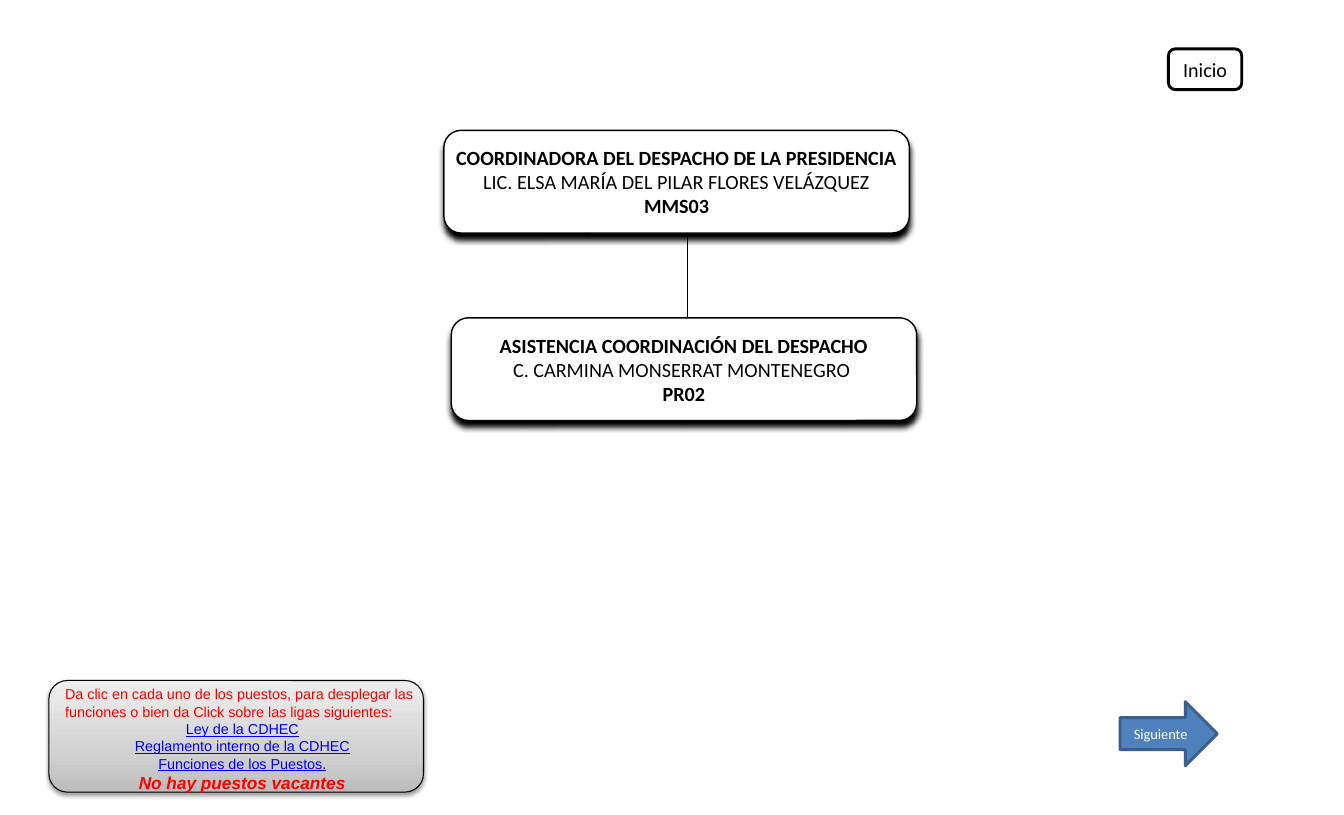
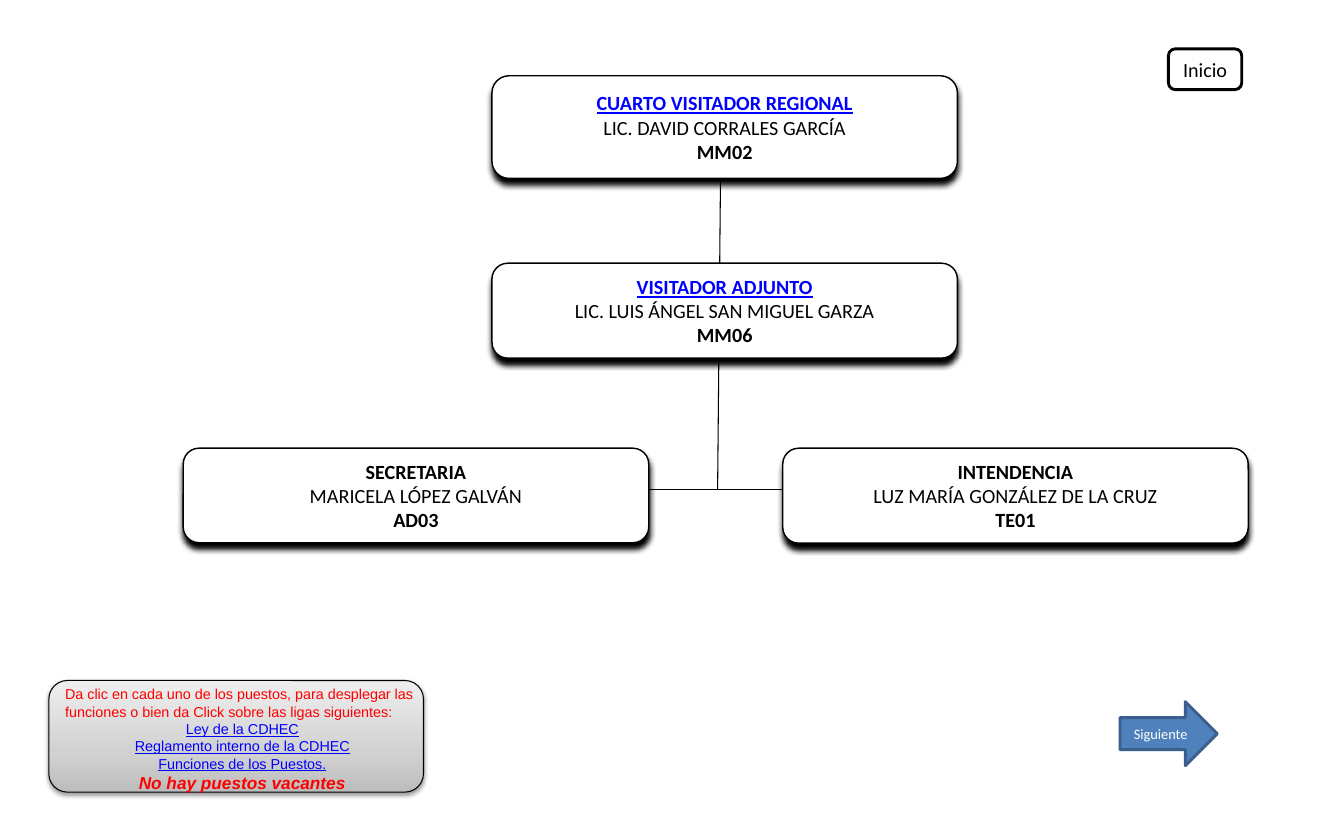
import pptx
import pptx.dml.color
import pptx.enum.shapes
import pptx.enum.text
import pptx.oxml
import pptx.oxml.ns
import pptx.util

Cm, Pt = pptx.util.Cm, pptx.util.Pt
Kind = pptx.enum.shapes.MSO_SHAPE
Align = pptx.enum.text.PP_ALIGN
Mid = pptx.enum.text.MSO_ANCHOR.MIDDLE
tint = pptx.dml.color.RGBColor.from_string
qn = pptx.oxml.ns.qn
NS = pptx.oxml.ns.nsdecls("a")

BLACK, WHITE, RED, LINK = "000000", "FFFFFF", "FF0000", "0000FF"
BLUE, NAVY = "4F81BD", "3A5F8C"
STOPS = [(0, "BDBDBD"), (35, "D1D1D1"), (100, "EEEEEE")]

BOLD = {"bold": True}
LINKED = {"underline": True}
NOTE = [
    ("Da clic en cada uno de los puestos, para desplegar las funciones "
     "o bien da Click sobre las ligas siguientes:", 10, RED, {}),
    ("Ley de la CDHEC", 10, LINK, LINKED),
    ("Reglamento interno de la CDHEC", 10, LINK, LINKED),
    ("Funciones de los Puestos.", 10, LINK, LINKED),
    ("No hay puestos vacantes", 12, RED, {"bold": True, "italic": True}),
]

# Each post: left, top, height, linked, title, holder, code
# Each link: start x, start y, end x, end y
CHARTS = [
    {"posts": [
        (10.9, 3.2, 2.52, False, "COORDINADORA DEL DESPACHO DE LA PRESIDENCIA",
         "LIC. ELSA MARÍA DEL PILAR FLORES VELÁZQUEZ", "MMS03"),
        (11.08, 7.8, 2.52, False, "ASISTENCIA COORDINACIÓN DEL DESPACHO",
         "C. CARMINA MONSERRAT MONTENEGRO ", "PR02")],
     "links": [(16.89, 5.72, 16.89, 7.8)]},
    {"posts": [
        (12.08, 1.86, 2.52, True, "CUARTO VISITADOR REGIONAL",
         "LIC. DAVID CORRALES GARCÍA", "MM02"),
        (12.08, 6.46, 2.33, True, "VISITADOR ADJUNTO",
         "LIC. LUIS ÁNGEL SAN MIGUEL GARZA", "MM06"),
        (4.5, 11, 2.32, False, "SECRETARIA", "MARICELA LÓPEZ GALVÁN", "AD03"),
        (19.22, 11, 2.33, False, "INTENDENCIA",
         "LUZ MARÍA GONZÁLEZ DE LA CRUZ", "TE01")],
     "links": [(17.69, 4.45, 17.62, 12.01), (14.71, 12.01, 20.55, 12.01)]},
]


def draw(slide, kind, box, fill, edge, width, drop=None):
    """Add a shape; drop is the shadow's opacity %, blur and distance in points."""
    shape = slide.shapes.add_shape(kind, *map(Cm, box))
    if fill:
        shape.fill.solid()
        shape.fill.fore_color.rgb = tint(fill)
    shape.line.color.rgb = tint(edge)
    shape.line.width = Pt(width)
    shape.shadow.inherit = False
    if drop:
        alpha, blur, dist = drop
        shape.element.spPr.find(qn("a:effectLst")).append(pptx.oxml.parse_xml(
            f'<a:outerShdw {NS} blurRad="{Pt(blur)}" dist="{Pt(dist)}" '
            f'dir="5400000" rotWithShape="0"><a:srgbClr val="{BLACK}">'
            f'<a:alpha val="{alpha * 1000}"/></a:srgbClr></a:outerShdw>'))
    return shape


def write(frame, face, lines):
    """Fill a frame with centred lines of text, size, colour and styles."""
    for row, (text, size, color, style) in enumerate(lines):
        para = frame.paragraphs[0] if row == 0 else frame.add_paragraph()
        para.alignment = Align.CENTER
        run = para.add_run()
        run.text = text
        run.font.color.rgb = tint(color)
        for key, value in {"name": face, "size": Pt(size), **style}.items():
            setattr(run.font, key, value)


deck = pptx.Presentation()
deck.slide_width = Cm(33)
deck.slide_height = Cm(20)

for chart in CHARTS:
    slide = deck.slides.add_slide(deck.slide_layouts[6])

    for ends in chart["links"]:
        link = slide.shapes.add_connector(
            pptx.enum.shapes.MSO_CONNECTOR.STRAIGHT, *map(Cm, ends))
        link.line.color.rgb = tint(BLACK)
        link.line.width = Pt(0.75)
        link.element.spPr.append(pptx.oxml.parse_xml(f"<a:effectLst {NS}/>"))

    for left, top, high, linked, title, holder, code in chart["posts"]:
        post = draw(slide, Kind.ROUNDED_RECTANGLE, (left, top, 11.43, high),
                    WHITE, BLACK, 1, (100, 4, 4))
        frame = post.text_frame
        layout = {"word_wrap": False, "vertical_anchor": Mid,
                  "margin_left": Cm(0.43), "margin_right": Cm(0.43),
                  "margin_top": Cm(0.23), "margin_bottom": Cm(0.23)}
        for key, value in layout.items():
            setattr(frame, key, value)
        head = (LINK, {**BOLD, **LINKED}) if linked else (BLACK, BOLD)
        write(frame, "Calibri", [(title, 14, *head), (holder, 14, BLACK, {}),
                                 (code, 14, BLACK, BOLD)])

    home = draw(slide, Kind.ROUNDED_RECTANGLE, (28.69, 1.2, 1.8, 1),
                WHITE, BLACK, 2)
    write(home.text_frame, "Calibri", [("Inicio", 14, BLACK, {})])

    panel = draw(slide, Kind.ROUNDED_RECTANGLE, (1.2, 16.7, 9.2, 2.74),
                 None, BLACK, 0.75, (38, 3.1, 1.6))
    stops = "".join(f'<a:gs pos="{at * 1000}"><a:srgbClr val="{color}"/></a:gs>'
                    for at, color in STOPS)
    panel.element.spPr.find(qn("a:prstGeom")).addnext(pptx.oxml.parse_xml(
        f'<a:gradFill {NS} rotWithShape="1"><a:gsLst>{stops}</a:gsLst>'
        '<a:lin ang="16200000" scaled="0"/></a:gradFill>'))

    note = slide.shapes.add_textbox(*map(Cm, (1.35, 16.7, 9.2, 2.9))).text_frame
    note.word_wrap = True
    write(note, "Arial", NOTE)
    note.paragraphs[0].alignment = Align.LEFT

    arrow = draw(slide, Kind.RIGHT_ARROW, (27.5, 17.22, 2.39, 1.57),
                 BLUE, NAVY, 2)
    write(arrow.text_frame, "Calibri", [("Siguiente", 10, WHITE, {})])

deck.save("out.pptx")
